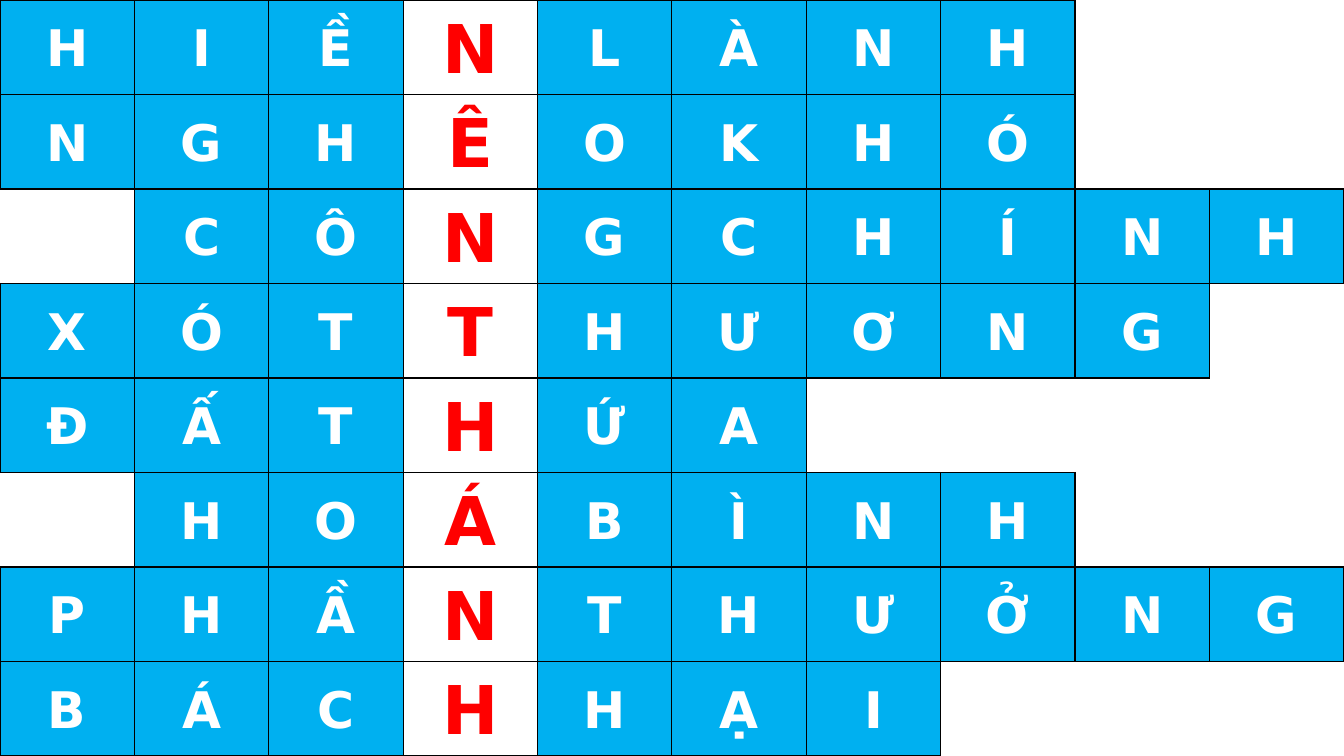
from lxml import etree
from pptx import Presentation
from pptx.dml.color import RGBColor
from pptx.enum.text import MSO_ANCHOR, PP_ALIGN
from pptx.oxml.ns import qn
from pptx.util import Inches, Pt

CENTER = PP_ALIGN.CENTER
MIDDLE = MSO_ANCHOR.MIDDLE

# One string per row, one letter per cell; a space is an unused cell.
ANSWERS = [
    "HIỀNLÀNH",
    "NGHÊOKHÓ",
    " CÔNGCHÍNH",
    "XÓTTHƯƠNG",
    "ĐẤTHỨA",
    " HOÁBÌNH",
    "PHẦNTHƯỞNG",
    "BÁCHHẠI",
]
KEY_COLUMN = 3
COLUMNS = max(len(answer) for answer in ANSWERS)
ROWS = len(ANSWERS)

COLORS = {"tile": "00B0F0", "letter": "FFFFFF", "key": "FF0000", "line": "000000"}
FONT = "DejaVu Sans"
LETTER_SIZE, KEY_SIZE = Pt(36), Pt(48)
LINE_WIDTH = Pt(1)
WIDTH, HEIGHT = Inches(13.33), Inches(7.5)
SIDES = {"lnL": (0, -1), "lnR": (0, 1), "lnT": (-1, 0), "lnB": (1, 0)}


def letter_at(row, column):
    """Return the letter in a cell, or "" for an unused or outside cell."""
    if 0 <= row < ROWS and 0 <= column < len(ANSWERS[row]):
        return ANSWERS[row][column].strip()
    return ""


def set_borders(cell, row, column):
    """Rule each side that touches a letter, on either side of it."""
    properties = cell._tc.get_or_add_tcPr()
    for index, (tag, (down, right)) in enumerate(SIDES.items()):
        line = etree.Element(qn(f"a:{tag}"), w=str(LINE_WIDTH))
        if letter_at(row, column) or letter_at(row + down, column + right):
            fill = etree.SubElement(line, qn("a:solidFill"))
            etree.SubElement(fill, qn("a:srgbClr"), val=COLORS["line"])
        else:
            etree.SubElement(line, qn("a:noFill"))
        properties.insert(index, line)


def write_letter(cell, letter, is_key):
    para = cell.text_frame.paragraphs[0]
    para.alignment = CENTER
    para.line_spacing = 1.07
    para.space_after = Pt(8)
    span = para.add_run()
    span.text = letter
    span.font.name = FONT
    span.font.bold = True
    span.font.size = KEY_SIZE if is_key else LETTER_SIZE
    span.font.color.rgb = RGBColor.from_string(COLORS["key" if is_key else "letter"])


def fill_cell(cell, row, column):
    letter = letter_at(row, column)
    is_key = column == KEY_COLUMN
    cell.vertical_anchor = MIDDLE
    cell.margin_left = cell.margin_right = Inches(0.07)
    cell.margin_top = cell.margin_bottom = 0
    if letter and not is_key:
        cell.fill.solid()
        cell.fill.fore_color.rgb = RGBColor.from_string(COLORS["tile"])
    else:
        cell.fill.background()
    if letter:
        write_letter(cell, letter, is_key)
    set_borders(cell, row, column)


def main():
    deck = Presentation()
    deck.slide_width, deck.slide_height = WIDTH, HEIGHT
    page = deck.slides.add_slide(deck.slide_layouts[6])
    crossword = page.shapes.add_table(ROWS, COLUMNS, 0, 0, WIDTH, HEIGHT).table
    crossword.first_row = crossword.horz_banding = False
    for row in range(ROWS):
        for column in range(COLUMNS):
            fill_cell(crossword.cell(row, column), row, column)
    deck.save("out.pptx")


if __name__ == "__main__":
    main()
